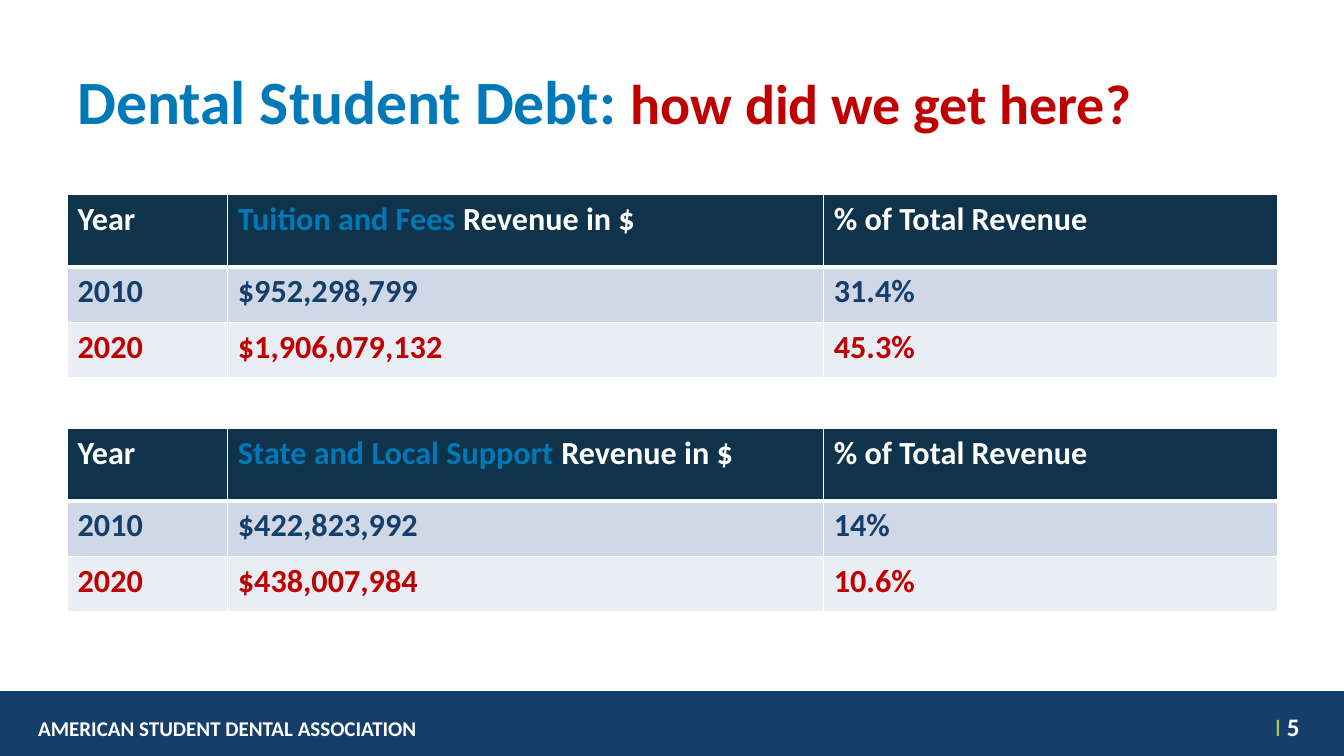
from lxml import etree
from pptx import Presentation
from pptx import util as u
from pptx.dml.color import RGBColor
from pptx.enum import shapes, text
from pptx.oxml import ns

COLORS = {
    "white": "FFFFFF",
    "navy": "153E6A",
    "header": "0F334A",
    "blue": "0079B8",
    "red": "C00000",
    "green": "ACC850",
    "band": "D0D8E8",
    "light band": "E9EDF4",
}
COLUMN_WIDTHS = (1.59, 5.91, 4.5)
ROW_HEIGHTS = (0.72, 0.55, 0.55)
ROW_STYLES = (("header", "white"), ("band", "navy"), ("light band", "red"))
TABLES = (
    (1.93, "Tuition and Fees ",
     (("2010", "$952,298,799", "31.4%"), ("2020", "$1,906,079,132", "45.3%"))),
    (4.25, "State and Local Support ",
     (("2010", "$422,823,992", "14%"), ("2020", "$438,007,984", "10.6%"))),
)


def rgb(name):
    """Return the named colour."""
    return RGBColor.from_string(COLORS[name])


def write(paragraph, runs, size, bold=True):
    """Fill a paragraph with (text, colour) runs in one font."""
    paragraph.font.name = "Calibri"
    paragraph.font.size = u.Pt(size)
    paragraph.font.bold = bold
    for words, color in runs:
        run = paragraph.add_run()
        run.text = words
        run.font.color.rgb = rgb(color)


def add_text(slide, left, top, width, height, runs, size, bold=True):
    """Add a wrapping text box and return its text frame."""
    box = slide.shapes.add_textbox(
        u.Inches(left), u.Inches(top), u.Inches(width), u.Inches(height))
    frame = box.text_frame
    frame.word_wrap = True
    write(frame.paragraphs[0], runs, size, bold)
    return frame


def add_title(slide):
    """Add the two-coloured title."""
    frame = add_text(slide, 0.67, 0.37, 12, 1.25,
                     [("Dental Student Debt: ", "blue"), ("how did we get here?", "red")], 44)
    frame.vertical_anchor = text.MSO_ANCHOR.MIDDLE
    frame.paragraphs[0].runs[1].font.size = u.Pt(40)


def add_footer(slide):
    """Add the footer bar with its label and slide number."""
    bar = slide.shapes.add_shape(
        shapes.MSO_SHAPE.RECTANGLE, 0, u.Inches(6.86), u.Inches(13.33), u.Inches(0.64))
    bar.shadow.inherit = False
    bar.fill.solid()
    bar.fill.fore_color.rgb = rgb("navy")
    bar.line.color.rgb = rgb("navy")
    bar.line.width = u.Pt(0.75)
    add_text(slide, 0.28, 7.05, 5.17, 0.35,
             [("AMERICAN STUDENT DENTAL ASSOCIATION", "white")], 15)
    number = add_text(slide, 12.36, 7.01, 0.63, 0.44,
                      [("I ", "green"), ("5", "white")], 18, bold=False).paragraphs[0]
    number.alignment = text.PP_ALIGN.RIGHT
    number.runs[1].font.bold = True


def set_borders(cell, top, bottom):
    """Give a cell white borders, with top and bottom widths in points."""
    properties = cell._tc.get_or_add_tcPr()
    for side, width in (("L", 1), ("R", 1), ("T", top), ("B", bottom)):
        line = etree.SubElement(properties, ns.qn(f"a:ln{side}"), w=str(u.Pt(width)))
        fill = etree.SubElement(line, ns.qn("a:solidFill"))
        etree.SubElement(fill, ns.qn("a:srgbClr"), val=COLORS["white"])


def add_revenue_table(slide, top, source, records):
    """Add a table of one revenue source by year."""
    table = slide.shapes.add_table(
        len(ROW_HEIGHTS), len(COLUMN_WIDTHS), u.Inches(0.67), u.Inches(top),
        u.Inches(sum(COLUMN_WIDTHS)), u.Inches(sum(ROW_HEIGHTS))).table
    for column, width in zip(table.columns, COLUMN_WIDTHS):
        column.width = u.Inches(width)
    for row, height in zip(table.rows, ROW_HEIGHTS):
        row.height = u.Inches(height)
    rows = (("Year", "Revenue in $", "% of Total Revenue"), *records)
    for r, (values, (fill, color)) in enumerate(zip(rows, ROW_STYLES)):
        for c, value in enumerate(values):
            cell = table.cell(r, c)
            set_borders(cell, 3 if r == 1 else 1, 3 if r == 0 else 1)
            cell.fill.solid()
            cell.fill.fore_color.rgb = rgb(fill)
            runs = [(value, color)]
            if (r, c) == (0, 1):
                runs.insert(0, (source, "blue"))
            write(cell.text_frame.paragraphs[0], runs, 23)


def main():
    """Build the slide and save it."""
    presentation = Presentation()
    presentation.slide_width = u.Inches(13.33)
    presentation.slide_height = u.Inches(7.5)
    slide = presentation.slides.add_slide(presentation.slide_layouts[6])
    add_footer(slide)
    add_title(slide)
    for top, source, records in TABLES:
        add_revenue_table(slide, top, source, records)
    presentation.save("out.pptx")


if __name__ == "__main__":
    main()
